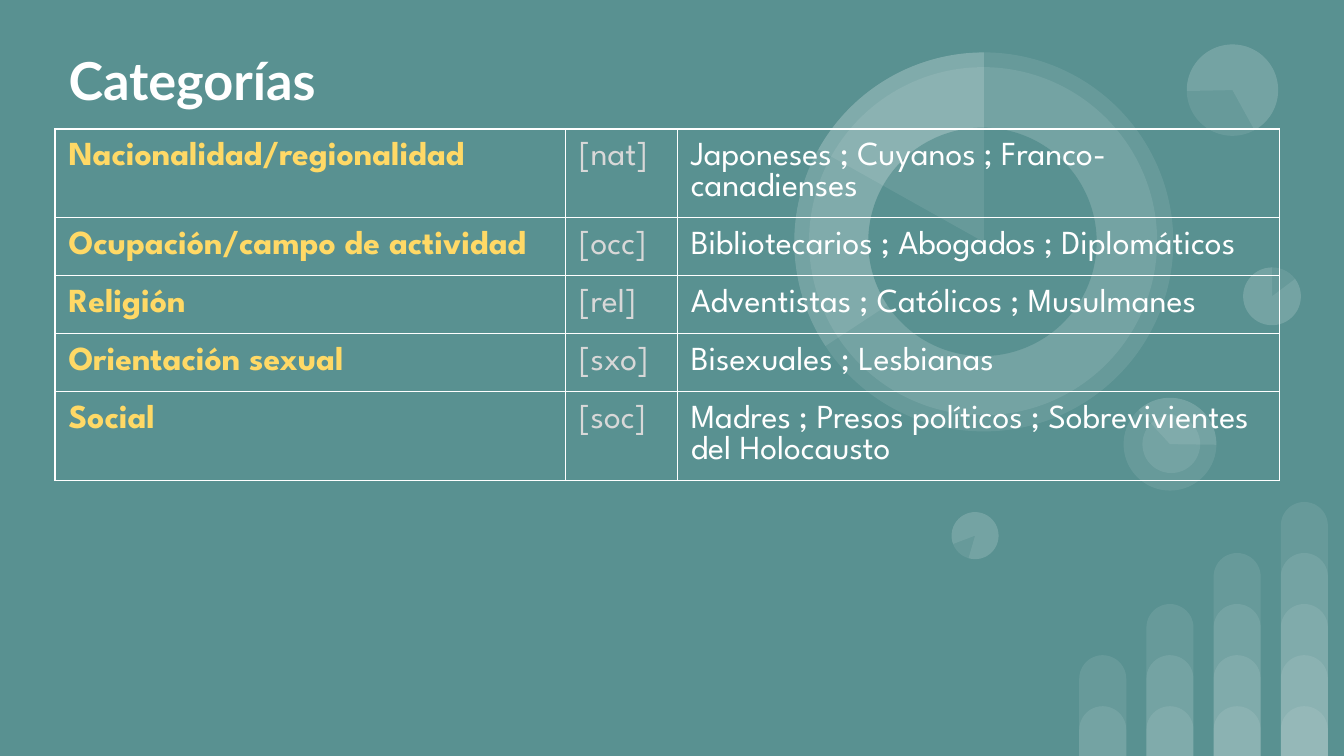
from typing import NamedTuple

from lxml import etree
from pptx import Presentation
from pptx.dml.color import RGBColor
from pptx.enum.shapes import MSO_SHAPE
from pptx.enum.text import MSO_ANCHOR, MSO_AUTO_SIZE, PP_ALIGN
from pptx.oxml import parse_xml
from pptx.oxml.ns import nsdecls, qn
from pptx.util import Inches, Pt

BAR = MSO_SHAPE.ROUND_2_SAME_RECTANGLE
DISC = MSO_SHAPE.OVAL
PIE = MSO_SHAPE.PIE
LEFT = PP_ALIGN.LEFT
TOP = MSO_ANCHOR.TOP
FIXED = MSO_AUTO_SIZE.NONE

TEAL = RGBColor(0x59, 0x91, 0x91)
WHITE = RGBColor(0xFF, 0xFF, 0xFF)
GOLD = RGBColor(0xFF, 0xD9, 0x66)
GRAY = RGBColor(0xD8, 0xD8, 0xD8)
ALPHA = 9  # percent
WIDE = 10
HIGH = WIDE * 9 / 16


class Round(NamedTuple):
    """A disc, or a pie when it has start and end angles in degrees."""
    left: float
    top: float
    size: float
    turn: float = 0
    arc: tuple[float, float] | None = None
    solid: bool = False


class Group(NamedTuple):
    name: str
    code: str
    terms: str


ROUNDS = [
    # Small charts
    Round(9.25, 1.99, 0.43),
    Round(7.08, 3.81, 0.35, 196.2),
    Round(8.36, 2.96, 0.69, 90),
    Round(8.36, 2.96, 0.69, 90, (137.41, 270.77)),
    Round(8.5, 3.09, 0.43, 90),
    Round(9.25, 1.99, 0.43, 0, (322.95, 270)),
    Round(8.83, 0.33, 0.68, 215.9),
    Round(8.83, 0.33, 0.68, 215.9, (322.95, 205.23)),
    # Large ring
    Round(5.91, 0.39, 2.82),
    Round(6.02, 0.5, 2.59, 34.1),
    Round(5.91, 0.39, 2.82, 0, (146.69, 270)),
    Round(6.46, 0.95, 1.7, 34.1, solid=True),
    Round(5.91, 0.39, 2.82, 0, (209.24, 270)),
    # Wedge of the lowest small chart
    Round(7.08, 3.81, 0.35, 196.2, (322.95, 270)),
]

GROUPS = [
    Group("Nacionalidad/regionalidad", "[nat]",
          "Japoneses ; Cuyanos ; Franco-canadienses"),
    Group("Ocupación/campo de actividad", "[occ]",
          "Bibliotecarios ; Abogados ; Diplomáticos"),
    Group("Religión", "[rel]", "Adventistas ; Católicos ; Musulmanes"),
    Group("Orientación sexual", "[sxo]", "Bisexuales ; Lesbianas"),
    Group("Social", "[soc]",
          "Madres ; Presos políticos ; Sobrevivientes del Holocausto"),
]
COLS = [3.8, 0.83, 4.48]
ROW = 0.42


def add_shape(slide, kind, left: float, top: float, wide: float, high: float,
              solid: bool = False):
    shape = slide.shapes.add_shape(
        kind, Inches(left), Inches(top), Inches(wide), Inches(high))
    shape.shadow.inherit = False
    shape.line.fill.background()
    shape.fill.solid()
    shape.fill.fore_color.rgb = TEAL if solid else WHITE
    if not solid:
        tint = shape.fill._xPr.find(".//" + qn("a:srgbClr"))
        etree.SubElement(tint, qn("a:alpha")).set("val", str(ALPHA * 1000))
    return shape


def add_bars(slide) -> None:
    for col in range(4):
        for step in range(col + 2):
            high = 0.37 + 0.38 * step
            bar = add_shape(slide, BAR, 8.03 + 0.5 * col, HIGH - high,
                            0.35, high)
            bar.adjustments[0] = 0.5


def add_round(slide, item: Round) -> None:
    shape = add_shape(slide, PIE if item.arc else DISC, item.left, item.top,
                      item.size, item.size, item.solid)
    shape.rotation = item.turn
    for i, angle in enumerate(item.arc or ()):
        shape.adjustments[i] = angle * 0.6  # 60000 units a degree, over 100000


def add_text(frame, text: str, font: str, size: float, color: RGBColor,
             bold: bool) -> None:
    para = frame.paragraphs[0]
    para.alignment = LEFT
    run = para.add_run()
    run.text = text
    run.font.name = font
    run.font.size = Pt(size)
    run.font.bold = bold
    run.font.color.rgb = color


def set_inset(box) -> None:
    box.margin_left = box.margin_right = Inches(0.1)
    box.margin_top = box.margin_bottom = Inches(0.1)
    box.vertical_anchor = TOP


def add_edges(cell) -> None:
    props = cell._tc.get_or_add_tcPr()
    for i, side in enumerate("LRTB"):
        props.insert(i, parse_xml(
            f'<a:ln{side} {nsdecls("a")} w="{Pt(0.75)}"><a:solidFill>'
            f'<a:srgbClr val="{WHITE}"/></a:solidFill></a:ln{side}>'))


def add_title(slide) -> None:
    title = slide.shapes.title
    title.left, title.top = Inches(0.41), Inches(0.26)
    title.width, title.height = Inches(6.03), Inches(0.7)
    frame = title.text_frame
    frame.auto_size = FIXED
    frame.word_wrap = True
    set_inset(frame)
    add_text(frame, "Categorías", "Lato", 28, WHITE, True)


def add_groups(slide) -> None:
    table = slide.shapes.add_table(
        len(GROUPS), len(COLS), Inches(0.41), Inches(0.96),
        Inches(sum(COLS)), Inches(ROW * len(GROUPS))).table
    table.first_row = table.horz_banding = False
    for col, wide in zip(table.columns, COLS):
        col.width = Inches(wide)
    for row, group in zip(table.rows, GROUPS):
        for cell, text, color in zip(row.cells, group, (GOLD, GRAY, WHITE)):
            cell.fill.background()
            set_inset(cell)
            add_edges(cell)
            add_text(cell.text_frame, text, "League Spartan", 18, color,
                     color == GOLD)


def main() -> None:
    deck = Presentation()
    deck.slide_width, deck.slide_height = Inches(WIDE), Inches(HIGH)
    slide = deck.slides.add_slide(deck.slide_layouts[5])
    slide.background.fill.solid()
    slide.background.fill.fore_color.rgb = TEAL

    # Backdrop
    add_bars(slide)
    for item in ROUNDS:
        add_round(slide, item)

    # Content, with the title above the backdrop
    add_title(slide)
    slide.shapes._spTree.append(slide.shapes.title._element)
    add_groups(slide)
    deck.save("out.pptx")


if __name__ == "__main__":
    main()
